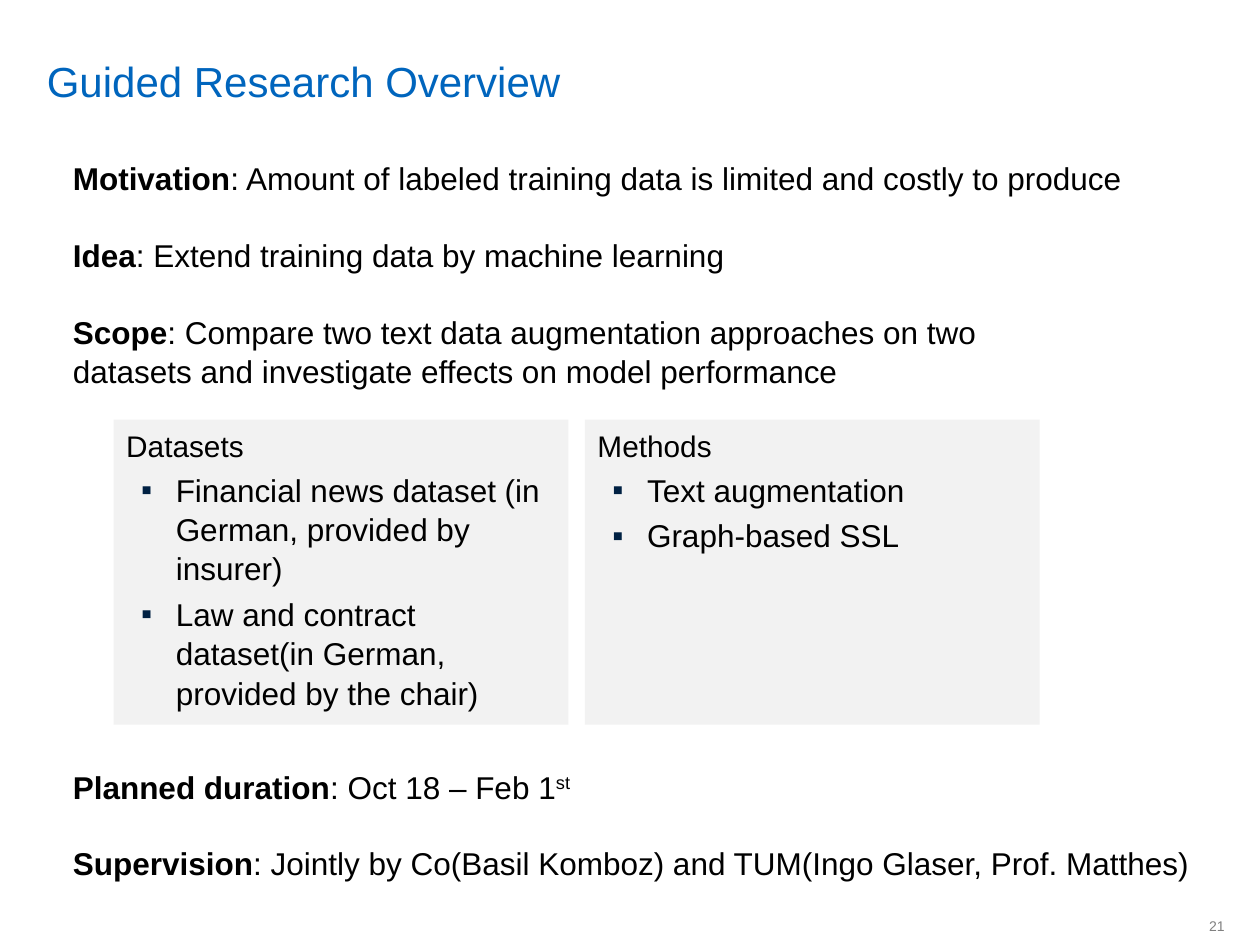
from pptx import Presentation
from pptx.dml.color import RGBColor
from pptx.enum.text import MSO_ANCHOR as Anchor, MSO_AUTO_SIZE as Fit, PP_ALIGN as Align
from pptx.oxml import parse_xml
from pptx.oxml.ns import nsdecls
from pptx.util import Cm, Pt

BLUE = RGBColor(0x00, 0x65, 0xBD)
BLACK = RGBColor(0x00, 0x00, 0x00)
GREY = RGBColor(0x80, 0x80, 0x80)
PALE = RGBColor(0xF2, 0xF2, 0xF2)
NAVY = "002143"


def add_run(para, text, size, color=BLACK, bold=False):
    run = para.add_run()
    run.text = text
    font = run.font
    font.name, font.size, font.bold = "Arial", Pt(size), bold
    font.color.rgb = color
    return run


def set_bullet(para, left, hang, *tags):
    """Set the indents and append the bullet elements, in schema order."""
    props = para._p.get_or_add_pPr()
    props.set("marL", str(Cm(left)))
    props.set("indent", str(Cm(-hang)))
    for tag in tags:
        props.append(parse_xml(tag))


ns = nsdecls("a")
PLAIN = [f"<a:buNone {ns}/>"]
SQUARE = [
    f'<a:buClr {ns}><a:srgbClr val="{NAVY}"/></a:buClr>',
    f'<a:buFont {ns} typeface="Arial"/>',
    f'<a:buChar {ns} char="▪"/>',
]

prs = Presentation()
prs.slide_width, prs.slide_height = Cm(25.4), Cm(19.05)
slide = prs.slides.add_slide(prs.slide_layouts[3])
title, *cards = slide.placeholders

# Title
title.left, title.top, title.width, title.height = Cm(0.69), Cm(0.13), Cm(20.93), Cm(2)
frame = title.text_frame
frame.auto_size = Fit.NONE
frame.vertical_anchor = Anchor.BOTTOM
frame.margin_top = frame.margin_bottom = 0
para = frame.paragraphs[0]
para.alignment = Align.LEFT
add_run(para, "Guided Research Overview", 24, BLUE)

# Slide number
box = slide.shapes.add_textbox(Cm(24), Cm(18.26), Cm(0.69), Cm(0.81))
frame = box.text_frame
frame.word_wrap = False
frame.vertical_anchor = Anchor.MIDDLE
frame.margin_right = 0
para = frame.paragraphs[0]
para.alignment = Align.RIGHT
add_run(para, "21", 8, GREY)

# Overview: space before, label, text
LINE = 21.5
facts = [
    (0, "Motivation", ": Amount of labeled training data is limited and costly to produce"),
    (LINE, "Idea", ": Extend training data by machine learning"),
    (LINE, "Scope", ": Compare two text data augmentation approaches on two"),
    (0, "", "datasets and investigate effects on model performance"),
    (10 * LINE, "Planned duration", ": Oct 18 – Feb 1"),
    (LINE, "Supervision", ": Jointly by Co(Basil Komboz) and TUM(Ingo Glaser, Prof. Matthes)"),
]
box = slide.shapes.add_textbox(Cm(1.22), Cm(3.05), Cm(23.01), Cm(14.88))
frame = box.text_frame
frame.word_wrap = False
for i, (gap, label, text) in enumerate(facts):
    para = frame.add_paragraph() if i else frame.paragraphs[0]
    para.line_spacing = 1.04
    para.space_before = Pt(gap)
    if label:
        add_run(para, label, 18, bold=True)
    add_run(para, text, 18)
    if label == "Planned duration":
        add_run(para, "st", 18).font._element.set("baseline", "30000")

# Cards
lists = [
    ("Datasets", "Financial news dataset (in German, provided by insurer)",
     "Law and contract dataset(in German, provided by the chair)"),
    ("Methods", "Text augmentation", "Graph-based SSL"),
]
for i, (card, (head, *items)) in enumerate(zip(cards, lists)):
    card.left, card.top = Cm(2.29 + i * 9.5), Cm(8.46)
    card.width, card.height = Cm(9.17), Cm(6.15)
    card.fill.solid()
    card.fill.fore_color.rgb = PALE
    frame = card.text_frame
    frame.auto_size = Fit.NONE
    frame.vertical_anchor = Anchor.TOP
    para = frame.paragraphs[0]
    para.line_spacing = 1.04
    para.space_before = Pt(0)
    set_bullet(para, 0, 0, *PLAIN)
    add_run(para, head, 17)
    for item in items:
        para = frame.add_paragraph()
        para.level = 1
        para.line_spacing = 1.04
        para.space_before = Pt(3.6)
        set_bullet(para, 1, 0.7, *SQUARE)
        add_run(para, item, 18)

prs.save("out.pptx")
